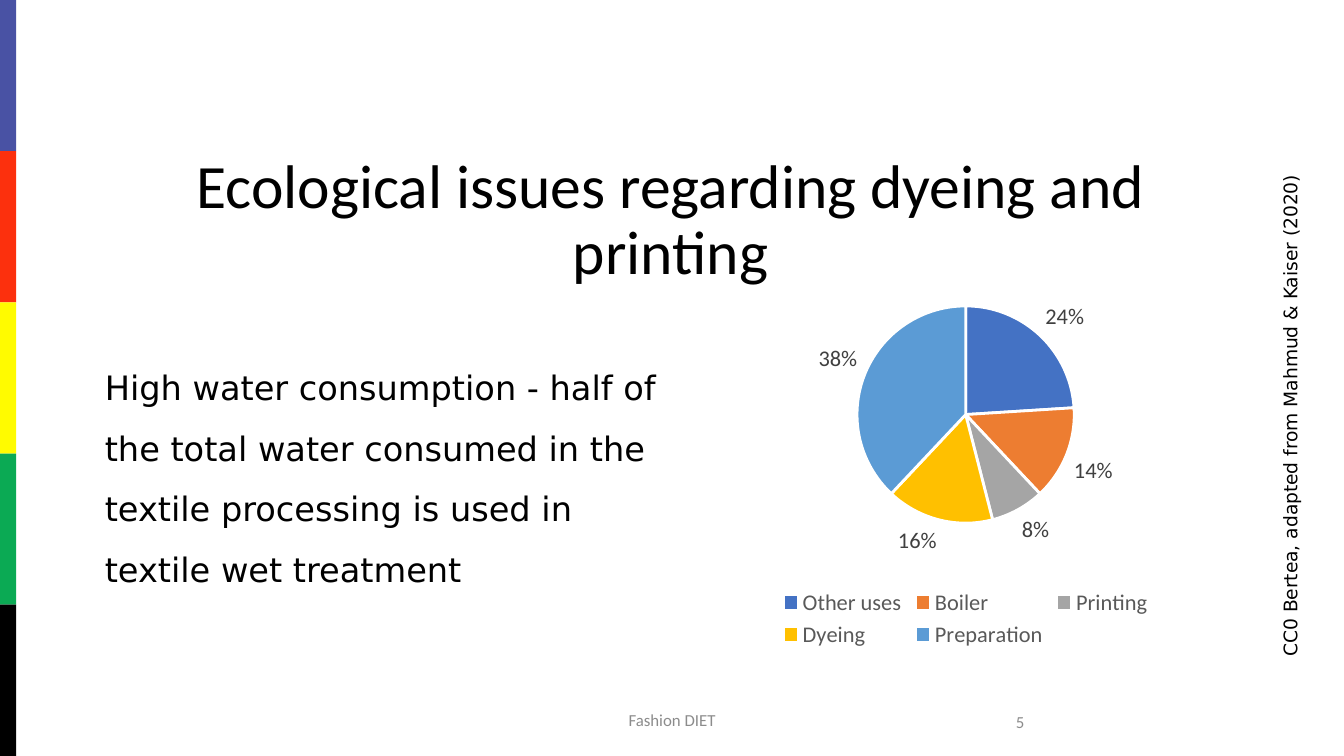
import dataclasses
import typing

import pptx
import pptx.chart.data
import pptx.dml.color
import pptx.enum.chart
import pptx.enum.shapes
import pptx.enum.text
import pptx.oxml
import pptx.oxml.ns
import pptx.util

WIDE = pptx.util.Inches(10)
HIGH = pptx.util.Inches(5.625)
ALIGN = pptx.enum.text.PP_ALIGN
MID = pptx.enum.text.MSO_ANCHOR.MIDDLE
TOP = pptx.enum.text.MSO_ANCHOR.TOP
BANDS = ["4952A4", "FC300D", "FFFB00", "0BAA54", "000000"]
USES = {
    "Other uses": (0.24, "4472C4"),
    "Boiler": (0.14, "ED7D31"),
    "Printing": (0.08, "A5A5A5"),
    "Dyeing": (0.16, "FFC000"),
    "Preparation": (0.38, "5B9BD5"),
}


@dataclasses.dataclass
class Area:
    left: float
    top: float
    width: float
    height: float

    def frame(self) -> dict[str, int]:
        return {
            "left": int(self.left * WIDE),
            "top": int(self.top * HIGH),
            "width": int(self.width * WIDE),
            "height": int(self.height * HIGH),
        }


@dataclasses.dataclass
class Note:
    text: str
    area: Area
    size: float
    face: str = "Calibri"
    hue: str = "000000"
    align: typing.Any = ALIGN.LEFT
    anchor: typing.Any = MID
    space: float = 1.0
    turn: float = 0


TITLE = Note("Ecological issues regarding dyeing and printing",
             Area(0.068, 0.244, 0.862, 0.098), 33, align=ALIGN.CENTER, space=0.9)
BODY = Note("High water consumption - half of the total water consumed in the "
            "textile processing is used in textile wet treatment",
            Area(0.068, 0.45, 0.441, 0.33), 18, "DejaVu Sans", anchor=TOP, space=1.5)
NOTES = [
    Note("Fashion DIET", Area(0.331, 0.926, 0.338, 0.053), 9, hue="8C8C8C",
         align=ALIGN.CENTER),
    Note("5", Area(0.547, 0.928, 0.225, 0.053), 9, hue="8C8C8C", align=ALIGN.RIGHT),
    Note("CC0 Bertea, adapted from Mahmud & Kaiser (2020)",
         Area(0.753, 0.494, 0.414, 0.048), 10, "DejaVu Sans", anchor=TOP, turn=270),
]


def tint(code: str) -> pptx.dml.color.RGBColor:
    return pptx.dml.color.RGBColor.from_string(code)


def apply(item: typing.Any, form: dict[str, typing.Any]) -> None:
    for name, value in form.items():
        setattr(item, name, value)


def style(font: typing.Any, size: float, hue: str, face: str = "Calibri") -> None:
    apply(font, {"size": pptx.util.Pt(size), "name": face, "bold": False})
    font.color.rgb = tint(hue)


def write(shape: typing.Any, note: Note) -> None:
    apply(shape, note.area.frame() | {"rotation": note.turn})
    frame = shape.text_frame
    apply(frame, {"text": note.text, "word_wrap": True, "vertical_anchor": note.anchor,
                  "auto_size": pptx.enum.text.MSO_AUTO_SIZE.NONE})
    para = frame.paragraphs[0]
    apply(para, {"alignment": note.align, "line_spacing": note.space,
                 "space_before": pptx.util.Pt(0)})
    style(para.runs[0].font, note.size, note.hue, note.face)


def unlist(para: typing.Any) -> None:
    props = para._p.get_or_add_pPr()
    props.set("marL", "0")
    props.set("indent", "0")
    mark = f"<a:buNone {pptx.oxml.ns.nsdecls('a')}/>"
    props.append(pptx.oxml.parse_xml(mark))


def stripe(slide: typing.Any, area: Area, hue: str) -> None:
    kind = pptx.enum.shapes.MSO_SHAPE.RECTANGLE
    band = slide.shapes.add_shape(kind, **{
        {"width": "width", "height": "height"}.get(key, key): size
        for key, size in area.frame().items()})
    band.shadow.inherit = False
    band.fill.solid()
    band.fill.fore_color.rgb = tint(hue)
    band.line.fill.background()


def plot(slide: typing.Any, area: Area) -> None:
    data = pptx.chart.data.CategoryChartData(number_format="0%")
    data.categories = list(USES)
    data.add_series("Series 1", [share for share, hue in USES.values()])
    box = area.frame()
    chart = slide.shapes.add_chart(
        pptx.enum.chart.XL_CHART_TYPE.PIE,
        box["left"], box["top"], box["width"], box["height"], data).chart
    style(chart.font, 10, "000000")
    apply(chart, {"has_title": False, "has_legend": True})
    apply(chart.legend, {"position": pptx.enum.chart.XL_LEGEND_POSITION.BOTTOM,
                         "include_in_layout": False})
    style(chart.legend.font, 12, "595959")
    pie = chart.plots[0]
    apply(pie, {"vary_by_categories": True, "has_data_labels": True})
    apply(pie.data_labels, {
        "show_value": True, "show_percentage": False,
        "number_format": "0%", "number_format_is_linked": False,
        "position": pptx.enum.chart.XL_LABEL_POSITION.OUTSIDE_END})
    style(pie.data_labels.font, 12, "404040")
    for rank, (share, hue) in enumerate(USES.values()):
        form = pie.series[0].points[rank].format
        form.fill.solid()
        form.fill.fore_color.rgb = tint(hue)
        form.line.color.rgb = tint("FFFFFF")
        form.line.width = pptx.util.Pt(1.5)


def main() -> None:
    deck = pptx.Presentation()
    apply(deck, {"slide_width": WIDE, "slide_height": HIGH})
    slide = deck.slides.add_slide(deck.slide_layouts[1])
    step = 1 / len(BANDS)
    for row, hue in enumerate(BANDS):
        stripe(slide, Area(0, row * step, 0.012, step), hue)
    write(slide.shapes.title, TITLE)
    body = slide.placeholders[1]
    write(body, BODY)
    unlist(body.text_frame.paragraphs[0])
    plot(slide, Area(0.489, 0.359, 0.459, 0.505))
    for note in NOTES:
        write(slide.shapes.add_textbox(0, 0, 0, 0), note)
    deck.save("out.pptx")


if __name__ == "__main__":
    main()
